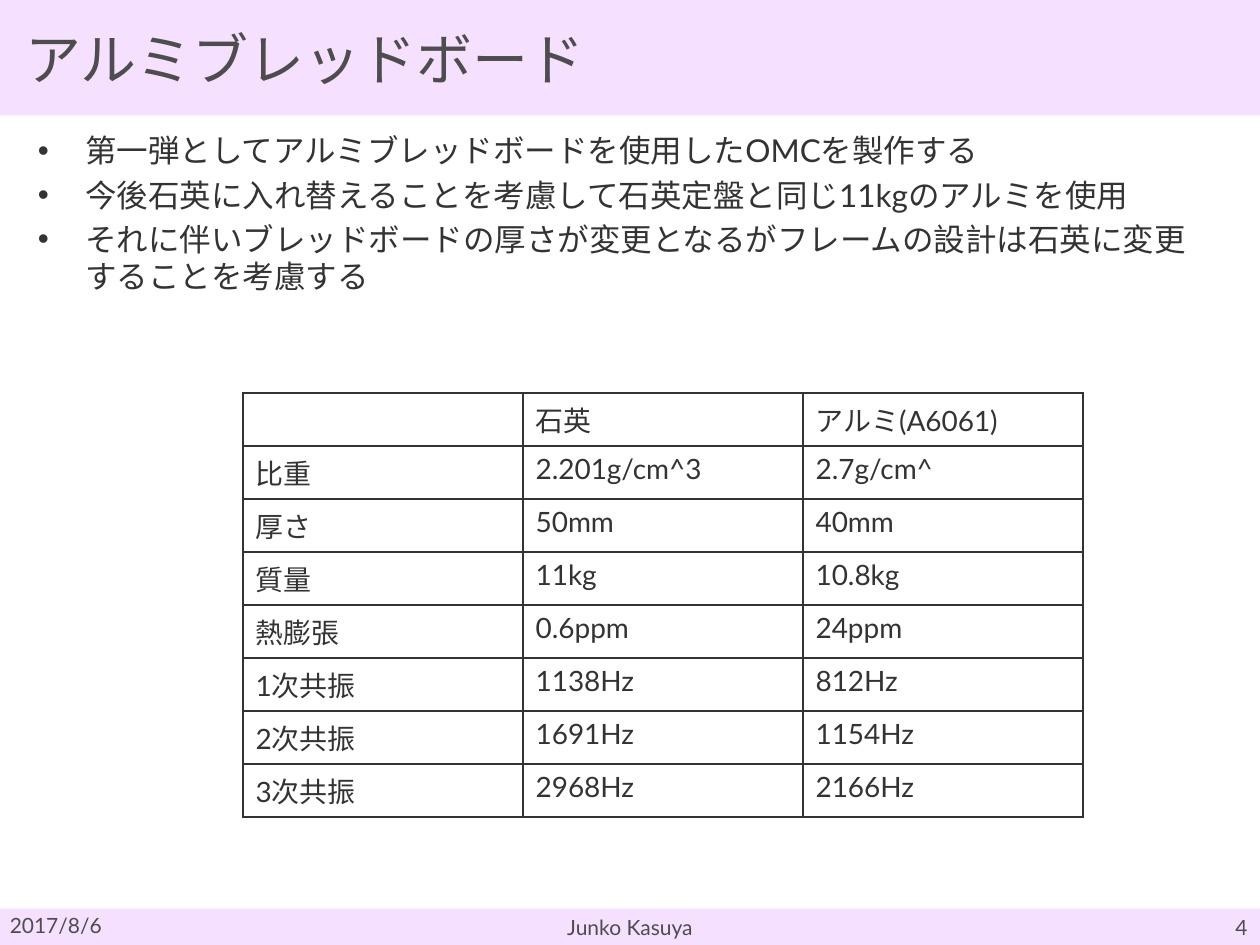
from lxml import etree
from pptx import Presentation
from pptx import util as u
from pptx.dml.color import RGBColor
from pptx.enum import shapes, text
from pptx.oxml import ns

LILAC = RGBColor(0xF5, 0xE0, 0xFF)
GREY = RGBColor(0x4D, 0x4D, 0x4D)
DARK = RGBColor(0x33, 0x33, 0x33)

TITLE = " アルミブレッドボード"
POINTS = [
    "第一弾としてアルミブレッドボードを使用したOMCを製作する",
    "今後石英に入れ替えることを考慮して石英定盤と同じ11kgのアルミを使用",
    "それに伴いブレッドボードの厚さが変更となるがフレームの設計は石英に変更することを考慮する",
]
MATERIALS = [
    ("", "石英", "アルミ(A6061)"),
    ("比重", "2.201g/cm^3", "2.7g/cm^"),
    ("厚さ", "50mm", "40mm"),
    ("質量", "11kg", "10.8kg"),
    ("熱膨張", "0.6ppm", "24ppm"),
    ("1次共振", "1138Hz", "812Hz"),
    ("2次共振", "1691Hz", "1154Hz"),
    ("3次共振", "2968Hz", "2166Hz"),
]


def set_all(target, values):
    for name, value in values.items():
        setattr(target, name, value)


class SlideBuilder:
    font_name = "Lato"

    def __init__(self, page):
        self.page = page

    def place(self, box, left, top, width, height):
        set_all(box, {"left": u.Pt(left), "top": u.Pt(top),
                      "width": u.Pt(width), "height": u.Pt(height)})

    def add_lines(self, frame, lines, size, color, align=text.PP_ALIGN.LEFT):
        for index, line in enumerate(lines):
            para = frame.add_paragraph() if index else frame.paragraphs[0]
            para.alignment = align
            span = para.add_run()
            span.text = line
            set_all(span.font, {"name": self.font_name, "size": u.Pt(size)})
            span.font.color.rgb = color

    def frame(self, box, anchor):
        set_all(box.text_frame, {"word_wrap": True, "vertical_anchor": anchor,
                                 "auto_size": text.MSO_AUTO_SIZE.NONE})
        return box.text_frame

    def band(self, *place):
        box = self.page.shapes.add_shape(
            shapes.MSO_SHAPE.RECTANGLE, *map(u.Pt, place))
        box.shadow.inherit = False
        box.fill.solid()
        box.fill.fore_color.rgb = LILAC
        box.line.fill.background()

    def title(self, line, *place):
        box = self.page.shapes.title
        self.place(box, *place)
        box.fill.solid()
        box.fill.fore_color.rgb = LILAC
        self.add_lines(self.frame(box, text.MSO_ANCHOR.MIDDLE), [line], 32, GREY)

    def bullets(self, lines, *place):
        box = self.page.placeholders[1]
        self.place(box, *place)
        self.add_lines(self.frame(box, text.MSO_ANCHOR.TOP), lines, 18, DARK)

    def label(self, line, align, *place):
        box = self.page.shapes.add_textbox(*map(u.Pt, place))
        self.add_lines(self.frame(box, text.MSO_ANCHOR.MIDDLE), [line], 12, GREY, align)

    def borders(self, cell):
        props = cell._tc.get_or_add_tcPr()
        for index, side in enumerate(("lnL", "lnR", "lnT", "lnB")):
            edge = etree.Element(ns.qn(f"a:{side}"), w=str(u.Pt(1)))
            fill = etree.SubElement(edge, ns.qn("a:solidFill"))
            etree.SubElement(fill, ns.qn("a:srgbClr"), val=str(DARK))
            props.insert(index, edge)

    def table(self, rows, left, top, col_width, row_height):
        grid = self.page.shapes.add_table(
            len(rows), len(rows[0]), u.Pt(left), u.Pt(top),
            u.Pt(col_width * len(rows[0])), u.Pt(row_height * len(rows))).table
        set_all(grid, {"first_row": False, "horz_banding": False})
        for r, values in enumerate(rows):
            for c, value in enumerate(values):
                cell = grid.cell(r, c)
                cell.fill.background()
                self.borders(cell)
                if value:
                    self.add_lines(cell.text_frame, [value], 16, DARK)


def main():
    deck = Presentation()
    set_all(deck, {"slide_width": u.Pt(720), "slide_height": u.Pt(540)})
    slide = SlideBuilder(deck.slides.add_slide(deck.slide_layouts[1]))

    # Heading and points
    slide.title(TITLE, 0, 0, 720, 66)
    slide.bullets(POINTS, 14.4, 71.5, 672.5, 221)

    # Material comparison
    slide.table(MATERIALS, 138.9, 224.6, 160, 30.3)

    # Footer
    slide.band(-1.5, 519.3, 721.5, 20.7)
    slide.label("2017/8/6", text.PP_ALIGN.LEFT, -1.5, 514, 168, 28.8)
    slide.label("Junko Kasuya", text.PP_ALIGN.CENTER, 246, 515.5, 228, 28.8)
    slide.label("4", text.PP_ALIGN.RIGHT, 552, 515.5, 168, 28.8)

    deck.save("out.pptx")


if __name__ == "__main__":
    main()
